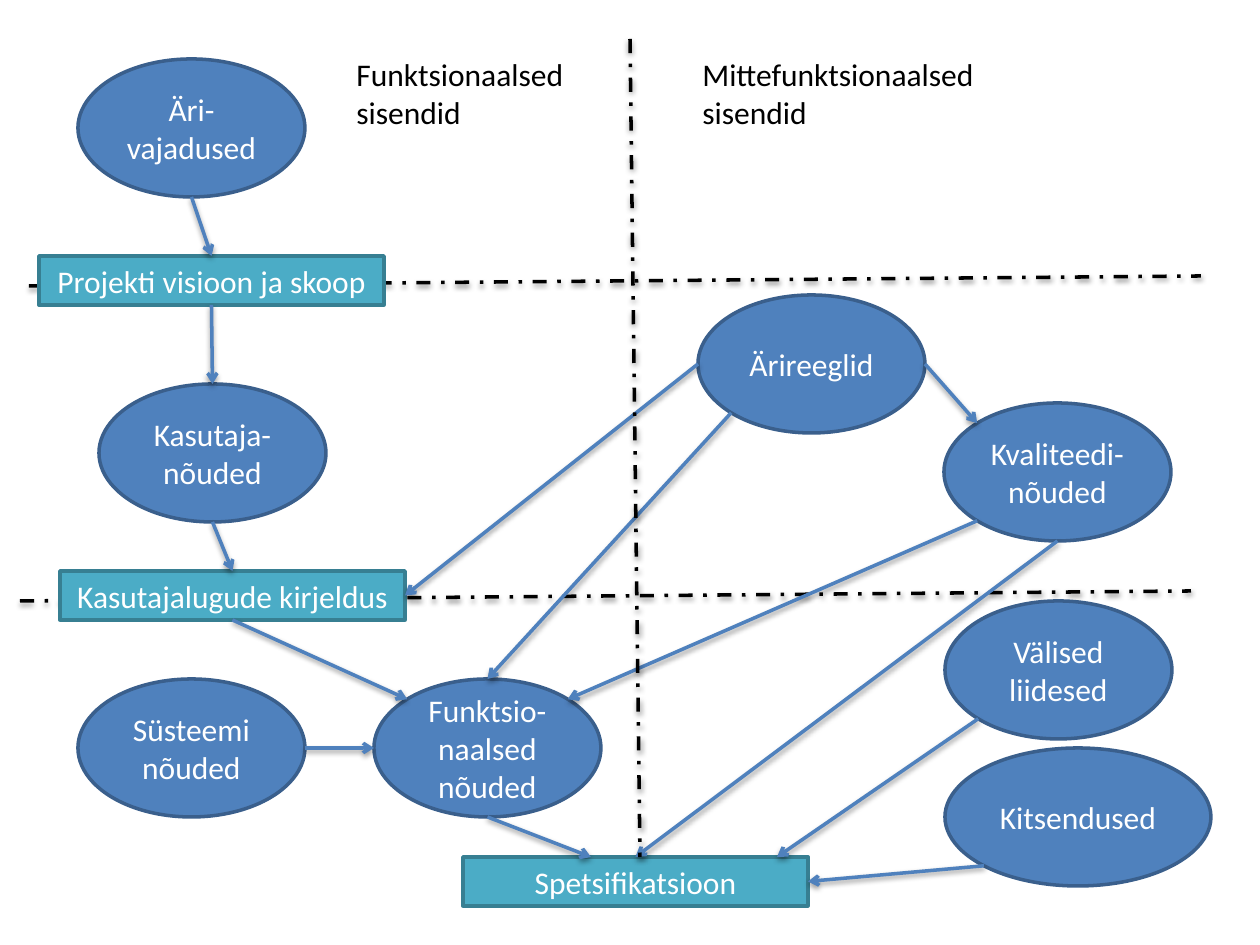
import math
from dataclasses import dataclass
from lxml import etree
from pptx import Presentation, util as u
from pptx.dml.color import RGBColor
from pptx.enum import dml, shapes, text
from pptx.oxml import parse_xml
from pptx.oxml.ns import nsdecls, qn


@dataclass
class Theme:
    font: str = "Calibri"
    size: int = 18
    line: int = 2
    ellipse: tuple = ("4F81BD", "3A5F8C")
    rect: tuple = ("4BACC6", "377F92")
    arrow: str = "4F81BD"
    black: str = "000000"
    white: str = "FFFFFF"


theme = Theme()
SCALE = 914400 / 126
SHADOW = (
    f'<a:effectLst {nsdecls("a")}><a:outerShdw blurRad="39370" dist="20320" '
    'dir="5400000" rotWithShape="0"><a:srgbClr val="000000">'
    '<a:alpha val="38000"/></a:srgbClr></a:outerShdw></a:effectLst>'
)

prs = Presentation()
prs.slide_width, prs.slide_height = u.Inches(10), u.Inches(7.5)
s = prs.slides.add_slide(prs.slide_layouts[6])


def add_line(x1, y1, x2, y2, color, dashed=False):
    ends = [u.Emu(round(v * SCALE)) for v in (x1, y1, x2, y2)]
    c = s.shapes.add_connector(shapes.MSO_CONNECTOR.STRAIGHT, *ends)
    c.line.color.rgb = RGBColor.from_string(color)
    c.line.width = u.Pt(theme.line)
    if dashed:
        c.line.dash_style = dml.MSO_LINE.DASH_DOT
    else:
        etree.SubElement(c.line._get_or_add_ln(), qn("a:tailEnd"), type="arrow")
    c._element.spPr.append(parse_xml(SHADOW))
    return c


def set_text(sp, content, color, **fmt):
    tf = sp.text_frame
    for key, value in fmt.items():
        setattr(tf, key, value)
    p = tf.paragraphs[0]
    p.text = content
    for r in p.runs:
        for key, value in {"name": theme.font, "size": u.Pt(theme.size)}.items():
            setattr(r.font, key, value)
        r.font.color.rgb = RGBColor.from_string(color)
    return p


for ends in [(20, 601, 1191, 591), (29, 286, 1201, 276)]:
    add_line(*ends, theme.black, dashed=True)

nodes = {
    "business": ("ellipse", "Äri-vajadused", 78, 59, 227, 138),
    "vision": ("rect", "Projekti visioon ja skoop", 39, 256, 345, 49),
    "user": ("ellipse", "Kasutaja-nõuded", 99, 384, 227, 138),
    "stories": ("rect", "Kasutajalugude kirjeldus", 60, 571, 345, 49),
    "system": ("ellipse", "Süsteemi nõuded", 78, 679, 227, 138),
    "functional": ("ellipse", "Funktsio-naalsed nõuded", 374, 679, 227, 138),
    "rules": ("ellipse", "Ärireeglid", 698, 295, 227, 138),
    "quality": ("ellipse", "Kvaliteedi-nõuded", 944, 403, 227, 138),
    "interfaces": ("ellipse", "Välised liidesed", 945, 601, 227, 138),
    "limits": ("ellipse", "Kitsendused", 945, 748, 266, 138),
    "specification": ("rect", "Spetsifikatsioon", 463, 857, 345, 49),
}
kinds = {
    "ellipse": (shapes.MSO_SHAPE.OVAL, theme.ellipse),
    "rect": (shapes.MSO_SHAPE.RECTANGLE, theme.rect),
}
placed = {}
for name, (kind, label, *box) in nodes.items():
    preset, (fill, outline) = kinds[kind]
    sp = s.shapes.add_shape(preset, *[u.Emu(round(v * SCALE)) for v in box])
    sp.shadow.inherit = False
    sp.fill.solid()
    sp.fill.fore_color.rgb = RGBColor.from_string(fill)
    sp.line.color.rgb = RGBColor.from_string(outline)
    sp.line.width = u.Pt(theme.line)
    p = set_text(sp, label, theme.white, vertical_anchor=text.MSO_ANCHOR.MIDDLE)
    p.alignment = text.PP_ALIGN.CENTER
    placed[name] = sp

TOP, LEFT, BOTTOM, RIGHT = 90, 180, 270, 0
UPPER_LEFT, LOWER_LEFT, UPPER_RIGHT = 135, 225, 45
sites = {TOP: 0, LEFT: 1, BOTTOM: 2, RIGHT: 3}
arrows = [
    ("business", BOTTOM, "vision", TOP),
    ("vision", BOTTOM, "user", TOP),
    ("user", BOTTOM, "stories", TOP),
    ("stories", BOTTOM, "functional", UPPER_LEFT),
    ("system", RIGHT, "functional", LEFT),
    ("functional", BOTTOM, (591, 857), None),
    ("rules", LEFT, "stories", RIGHT),
    ("rules", LOWER_LEFT, "functional", TOP),
    ("rules", RIGHT, "quality", UPPER_LEFT),
    ("quality", LOWER_LEFT, "functional", UPPER_RIGHT),
    ("quality", BOTTOM, "specification", TOP),
    ("interfaces", LOWER_LEFT, (777, 857), None),
    ("limits", LOWER_LEFT, "specification", RIGHT),
]
for start, start_angle, end, end_angle in arrows:
    points = []
    for node, angle in ((start, start_angle), (end, end_angle)):
        if angle is None:
            points += node
            continue
        x, y, w, h = nodes[node][2:]
        a = math.radians(angle)
        points += [x + w / 2 * (1 + math.cos(a)), y + h / 2 * (1 - math.sin(a))]
    c = add_line(*points, theme.arrow)
    for node, angle, join in ((start, start_angle, c.begin_connect),
                              (end, end_angle, c.end_connect)):
        if angle is not None and (nodes[node][0] == "rect" or angle == TOP):
            join(placed[node], sites[angle])

add_line(630, 39, 640, 857, theme.black, dashed=True)

for label, *box in [
    ("Funktsionaalsed \vsisendid", 344, 49, 242, 89),
    ("Mittefunktsionaalsed\vsisendid", 690, 49, 300, 89),
]:
    sp = s.shapes.add_textbox(*[u.Emu(round(v * SCALE)) for v in box])
    set_text(sp, label, theme.black, word_wrap=False,
             auto_size=text.MSO_AUTO_SIZE.SHAPE_TO_FIT_TEXT)

prs.save("out.pptx")
